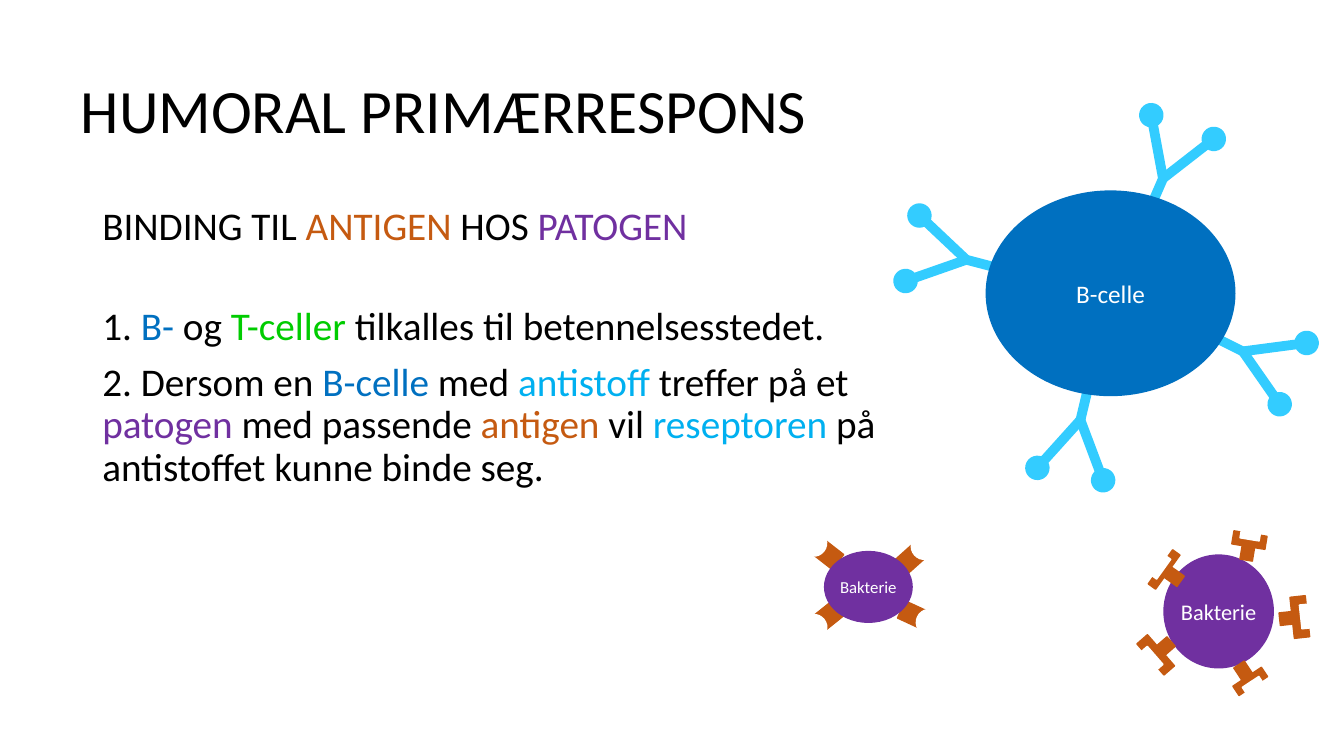
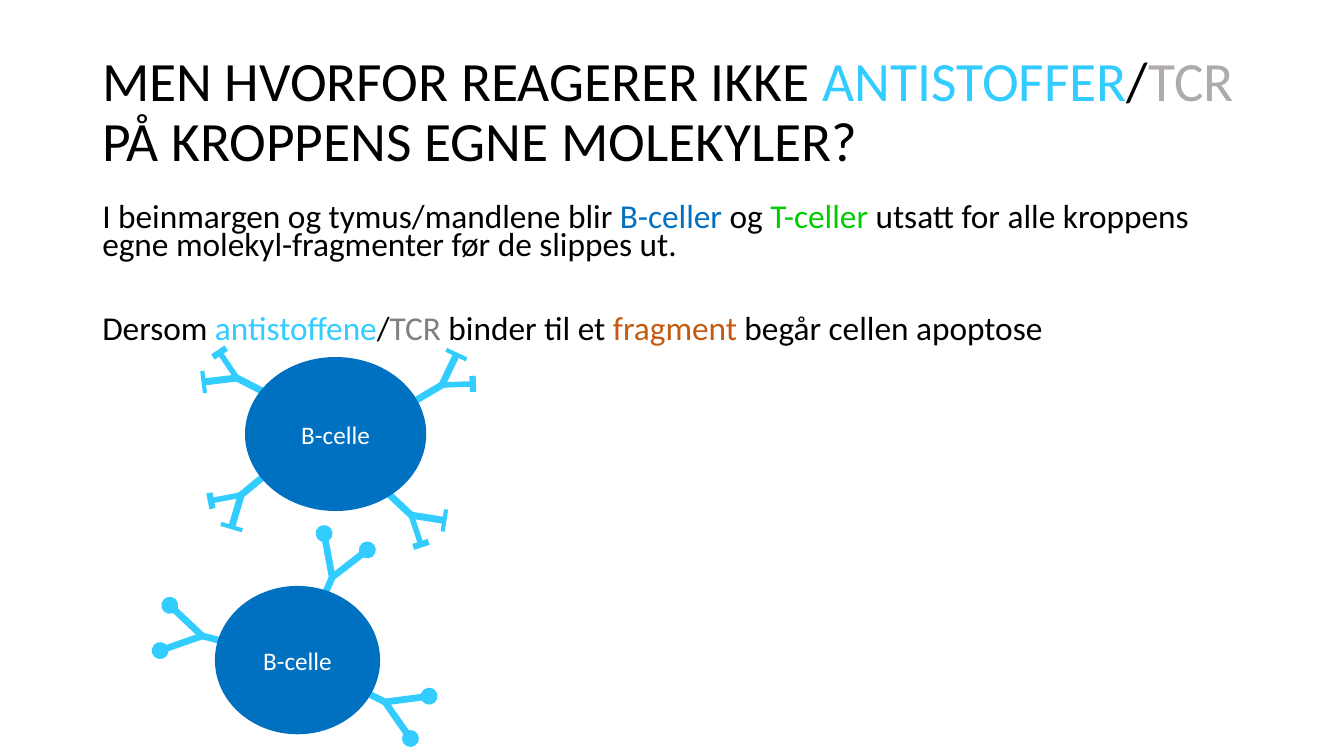
from math import cos, radians, sin

from pptx import Presentation
from pptx.dml.color import RGBColor
from pptx.enum.shapes import MSO_SHAPE
from pptx.enum.text import MSO_ANCHOR, PP_ALIGN
from pptx.util import Pt

RECTANGLE, OVAL = MSO_SHAPE.RECTANGLE, MSO_SHAPE.OVAL
TOP, MIDDLE = MSO_ANCHOR.TOP, MSO_ANCHOR.MIDDLE
LEFT, CENTER = PP_ALIGN.LEFT, PP_ALIGN.CENTER

FONT = "Calibri"
COLORS = {
    "text": "000000",
    "white": "FFFFFF",
    "cell": "0070C0",
    "t_cell": "00CC00",
    "antibody": "33CCFF",
    "antibody_text": "00B0F0",
    "antigen": "C55A11",
    "pathogen": "7030A0",
    "light_gray": "AFABAB",
    "gray": "808080",
}
TITLE = {"size": 44, "anchor": MIDDLE, "spacing": 0.9}
BODY = {"size": 28, "anchor": TOP, "spacing": 0.9}

# Antibody arms: turn from the stem, length, thickness, tip length, tip thickness
BALL_ANTIBODY = {
    "stem": (-36, 3, 7),
    "arms": [(-34, 46, 7, 17.5, 17.5), (28.6, 46, 7, 17.5, 17.5)],
    "tip": OVAL,
}
BAR_ANTIBODY = {
    "stem": (-21, 1, 5),
    "arms": [(-34, 24, 5, 16, 3), (28.6, 22, 4, 11.5, 4.5)],
    "tip": RECTANGLE,
}
BAR_ANTIBODY["arms"] = [(-34, 24, 5, 3, 16), (28.6, 22, 4, 4.5, 11.5)]

# Antibody joints, from the centre of a cell: x, y, stem angle
BALL_JOINTS = [(37.5, -82, 293.5), (94.5, 41.5, 26.5),
               (-103, -24, 194.7), (-21.5, 90.5, 103.4)]
BAR_JOINTS = [(76, -35, 329.4), (54, 58, 43.1),
              (-67.5, 43.5, 140.5), (-70.5, -40, 207.2)]
BALL_CELL_SIZE = (178.5, 147)

# Antigens, from the centre of a bacterium: x, y, outward angle
CURVED_ANTIGENS = [(-29, -23.5, 217.9), (30.5, -20.5, 318.2),
                   (32, 20, 24.8), (-29, 21, 141.3)]
# The same, then width and depth of the fork
FORKED_ANTIGENS = [(-39, -30, 215.6, 30, 6.5), (22, -51, 279.4, 24, 9.5),
                   (58, 4, 353.8, 29.5, 11), (-45, 31, 139, 29.5, 10),
                   (22.5, 50, 56.4, 24.5, 8)]


def rgb(name):
    return RGBColor.from_string(COLORS[name])


def set_values(target, values):
    for name, value in values.items():
        setattr(target, name, value)


def outward(point, angle, distance):
    """Point at a distance from another, clockwise from the right."""
    turn = radians(angle)
    return point[0] + distance * cos(turn), point[1] + distance * sin(turn)


def middle_of(box):
    left, top, width, height = box
    return left + width / 2, top + height / 2


def write_spans(para, spans, size):
    for text, color in spans:
        span = para.add_run()
        span.text = text
        set_values(span.font, {"name": FONT, "size": Pt(size)})
        span.font.color.rgb = rgb(color)


def add_text(page, box, paras, style):
    """Each paragraph is its space before and a list of coloured spans."""
    frame = page.shapes.add_textbox(*map(Pt, box)).text_frame
    set_values(frame, {"word_wrap": True, "vertical_anchor": style["anchor"]})
    for index, (space, spans) in enumerate(paras):
        para = frame.paragraphs[0] if index == 0 else frame.add_paragraph()
        set_values(para, {"line_spacing": style["spacing"], "alignment": LEFT,
                          "space_before": Pt(space)})
        write_spans(para, spans, style["size"])


def add_part(page, kind, center, size, angle, color, outline=False):
    width, height = size
    part = page.shapes.add_shape(
        kind, Pt(center[0] - width / 2), Pt(center[1] - height / 2),
        Pt(width), Pt(height))
    part.rotation = angle % 360
    part.shadow.inherit = False
    part.fill.solid()
    part.fill.fore_color.rgb = rgb(color)
    if outline:
        part.line.color.rgb = rgb(color)
        part.line.width = Pt(1)
    else:
        part.line.fill.background()
    return part


def add_body(page, box, label, size, color, outline=False):
    body = add_part(page, OVAL, middle_of(box), box[2:], 0, color, outline)
    frame = body.text_frame
    set_values(frame, {"margin_left": 0, "margin_right": 0, "margin_top": 0,
                       "margin_bottom": 0, "vertical_anchor": MIDDLE,
                       "word_wrap": True})
    frame.paragraphs[0].alignment = CENTER
    write_spans(frame.paragraphs[0], [(label, "white")], size)


def add_antibody(page, joint, angle, form, scale):
    def add_bar(start, end, thickness, turn):
        center = outward(joint, turn, (start + end) / 2 * scale)
        add_part(page, RECTANGLE, center,
                 ((end - start) * scale, thickness * scale), turn, "antibody")

    add_bar(*form["stem"], angle)
    for turn, reach, thickness, *tip_size in form["arms"]:
        add_bar(-1, reach, thickness, angle + turn)
        tip = outward(joint, angle + turn, reach * scale)
        add_part(page, form["tip"], tip, [side * scale for side in tip_size],
                 angle + turn, "antibody")


def add_b_cell(page, box, form, joints, base_size):
    """Cell with antibodies, fitted to its box."""
    center_x, center_y = middle_of(box)
    scale_x, scale_y = box[2] / base_size[0], box[3] / base_size[1]
    for x, y, angle in joints:
        joint = center_x + x * scale_x, center_y + y * scale_y
        add_antibody(page, joint, angle, form, (scale_x + scale_y) / 2)
    add_body(page, box, "B-celle", 18, "cell")


def add_curved_bacterium(page, box):
    center_x, center_y = middle_of(box)
    for x, y, angle in CURVED_ANTIGENS:
        block = center_x + x, center_y + y
        add_part(page, RECTANGLE, block, (18.5, 13.5), angle, "antigen", True)
        add_part(page, OVAL, outward(block, angle, 11.5), (16, 17.5), angle,
                 "white", True)
    add_body(page, box, "Bakterie", 12, "pathogen", True)


def add_forked_bacterium(page, box):
    center_x, center_y = middle_of(box)
    add_body(page, box, "Bakterie", 16, "pathogen", True)
    for x, y, angle, width, depth in FORKED_ANTIGENS:
        fork = center_x + x, center_y + y
        parts = [(-8.5, (12, 9), "antigen"),
                 (0, (depth, width), "antigen"),
                 (depth * 0.55, (depth, width * 0.58), "white")]
        for distance, size, color in parts:
            add_part(page, RECTANGLE, outward(fork, angle, distance), size,
                     angle, color, True)


def build_response_page(page):
    add_text(page, (50.5, 29, 890.5, 104.5),
             [(0, [("HUMORAL PRIMÆRRESPONS", "text")])], TITLE)
    add_text(page, (66, 144, 596, 342.5), [
        (10, [("BINDING TIL ", "text"), ("ANTIGEN", "antigen"),
              (" HOS ", "text"), ("PATOGEN", "pathogen")]),
        (41, [("1. ", "text"), ("B- ", "cell"), ("og ", "text"),
              ("T-celler ", "t_cell"),
              ("tilkalles til betennelsesstedet.", "text")]),
        (10, [("2. Dersom en ", "text"), ("B-celle", "cell"),
              (" med ", "text"), ("antistoff ", "antibody_text"),
              ("treffer på et ", "text"), ("patogen", "pathogen"),
              (" med passende ", "text"), ("antigen ", "antigen"),
              ("vil ", "text"), ("reseptoren ", "antibody_text"),
              ("på antistoffet kunne binde seg.", "text")]),
    ], BODY)
    add_forked_bacterium(page, (831.5, 396.5, 78, 80.5))
    add_curved_bacterium(page, (589, 394, 62.5, 50.5))
    add_b_cell(page, (704, 136, *BALL_CELL_SIZE), BALL_ANTIBODY, BALL_JOINTS,
               BALL_CELL_SIZE)


def build_tolerance_page(page):
    add_text(page, (66, 29, 828, 104.5), [
        (0, [("MEN HVORFOR REAGERER IKKE ", "text"),
             ("ANTISTOFFER", "antibody"), ("/", "text"),
             ("TCR", "light_gray"),
             (" PÅ KROPPENS EGNE MOLEKYLER?", "text")]),
    ], {**TITLE, "size": 39.6})
    add_text(page, (66, 144, 828, 114), [
        (10, [("I beinmargen og tymus/mandlene blir ", "text"),
              ("B-celler", "cell"), (" og ", "text"), ("T-celler", "t_cell"),
              (" utsatt for alle kroppens egne molekyl-fragmenter "
               "før de slippes ut.", "text")]),
        (40, [("Dersom ", "text"), ("antistoffene", "antibody"),
              ("/", "text"), ("TCR", "gray"), (" binder til et ", "text"),
              ("fragment", "antigen"), (" begår cellen apoptose", "text")]),
    ], {**BODY, "size": 23.8, "spacing": 0.7})
    add_b_cell(page, (153.5, 418.5, 118, 106), BALL_ANTIBODY, BALL_JOINTS[:3],
               BALL_CELL_SIZE)
    bar_cell = (175, 255, 129.5, 110)
    add_b_cell(page, bar_cell, BAR_ANTIBODY, BAR_JOINTS, bar_cell[2:])


def main():
    deck = Presentation()
    set_values(deck, {"slide_width": Pt(960), "slide_height": Pt(540)})
    for build in (build_response_page, build_tolerance_page):
        build(deck.slides.add_slide(deck.slide_layouts[6]))
    deck.save("out.pptx")


if __name__ == "__main__":
    main()
